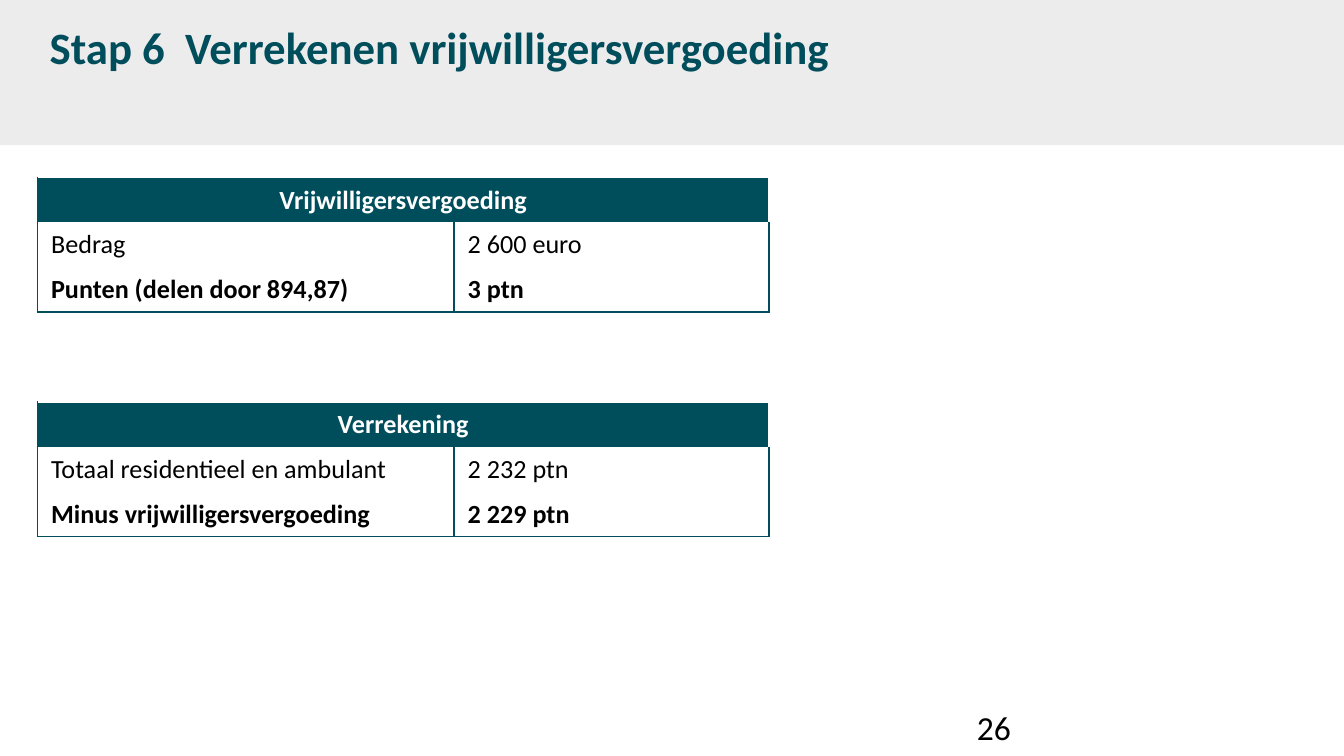
from pptx import Presentation
from pptx.dml.color import RGBColor
from pptx.enum.shapes import MSO_SHAPE
from pptx.enum.text import MSO_ANCHOR, PP_ALIGN
from pptx.oxml import parse_xml
from pptx.oxml.ns import nsdecls, qn
from pptx.util import Inches, Pt

RECT = MSO_SHAPE.RECTANGLE
MIDDLE = MSO_ANCHOR.MIDDLE
LEFT, CENTER = PP_ALIGN.LEFT, PP_ALIGN.CENTER
PLAIN_TABLE = "{2D5ABB26-0587-4C30-8999-92F81FD0307C}"  # no style, no grid

THEME = {
    "font": "Calibri",
    "teal": "004D5C", "band": "ECECEC", "white": "FFFFFF", "black": "000000",
    "title": 24, "number": 18, "cell": 14,
}


def write(tf, text, size, color, bold=False, align=LEFT):
    p = tf.paragraphs[0]
    p.alignment = align
    r = p.add_run()
    r.text = text
    style = {"name": THEME["font"], "size": Pt(THEME[size]), "bold": bold}
    for key, value in style.items():
        setattr(r.font, key, value)
    r.font.color.rgb = RGBColor.from_string(THEME[color])


def add_borders(cell, borders):
    # Sides must come in the order L, R, T, B
    tcPr = cell._tc.get_or_add_tcPr()
    for side, color in borders.items():
        tcPr.append(parse_xml(
            f'<a:ln{side} {nsdecls("a")} w="{Pt(1)}"><a:solidFill>'
            f'<a:srgbClr val="{THEME[color]}"/></a:solidFill></a:ln{side}>'))


# A 16:9 slide
prs = Presentation()
prs.slide_width = Inches(10)
prs.slide_height = prs.slide_width * 9 // 16
s = prs.slides.add_slide(prs.slide_layouts[5])

# Header band, behind the title
band = s.shapes.add_shape(RECT, Inches(0), Inches(-0.02), Inches(10), Inches(1.1))
band.shadow.inherit = False
band.fill.solid()
band.fill.fore_color.rgb = RGBColor.from_string(THEME["band"])
band.line.fill.background()
s.shapes._spTree.insert(2, band._element)

# Title
title = s.shapes.title
title.left, title.top = Inches(0.27), Inches(0)
title.width, title.height = Inches(9.45), Inches(0.69)
title.text_frame.vertical_anchor = MIDDLE
write(title.text_frame, "Stap 6  Verrekenen vrijwilligersvergoeding", "title", "teal", True)

# Page number
number = s.shapes.add_textbox(Inches(7.17), Inches(5.21), Inches(2.33), Inches(0.3))
number.text_frame.word_wrap = True
write(number.text_frame, "26", "number", "black")

# Tables: heading across both columns, a plain row and a bold result row
TABLES = [
    (1.32, "Vrijwilligersvergoeding",
     [("Bedrag", "2 600 euro"), ("Punten (delen door 894,87)", "3 ptn")]),
    (2.99, "Verrekening",
     [("Totaal residentieel en ambulant", "2 232 ptn"),
      ("Minus vrijwilligersvergoeding", "2 229 ptn")]),
]
COLUMNS = (3.1, 2.34)
ROW_HEIGHT = 0.31
HEAD_BORDERS = {"L": "teal", "R": "white", "T": "white"}
BODY_BORDERS = {"L": "teal", "R": "teal"}
LAST_BORDERS = {**BODY_BORDERS, "B": "teal"}

for top, heading, rows in TABLES:
    table = s.shapes.add_table(len(rows) + 1, len(COLUMNS), Inches(0.28), Inches(top),
                               Inches(sum(COLUMNS)),
                               Inches(ROW_HEIGHT * (len(rows) + 1))).table
    table.horz_banding = False
    table._tbl.tblPr.find(qn("a:tableStyleId")).text = PLAIN_TABLE
    for column, width in zip(table.columns, COLUMNS):
        column.width = Inches(width)

    head = table.cell(0, 0)
    head.merge(table.cell(0, 1))
    for cell in table.rows[0].cells:
        add_borders(cell, HEAD_BORDERS)
        cell.fill.solid()
        cell.fill.fore_color.rgb = RGBColor.from_string(THEME["teal"])
    write(head.text_frame, heading, "cell", "white", True, CENTER)

    for i, row in enumerate(rows, 1):
        last = i == len(rows)
        for j, text in enumerate(row):
            cell = table.cell(i, j)
            add_borders(cell, LAST_BORDERS if last else BODY_BORDERS)
            cell.fill.background()
            write(cell.text_frame, text, "cell", "black", last)

prs.save("out.pptx")
